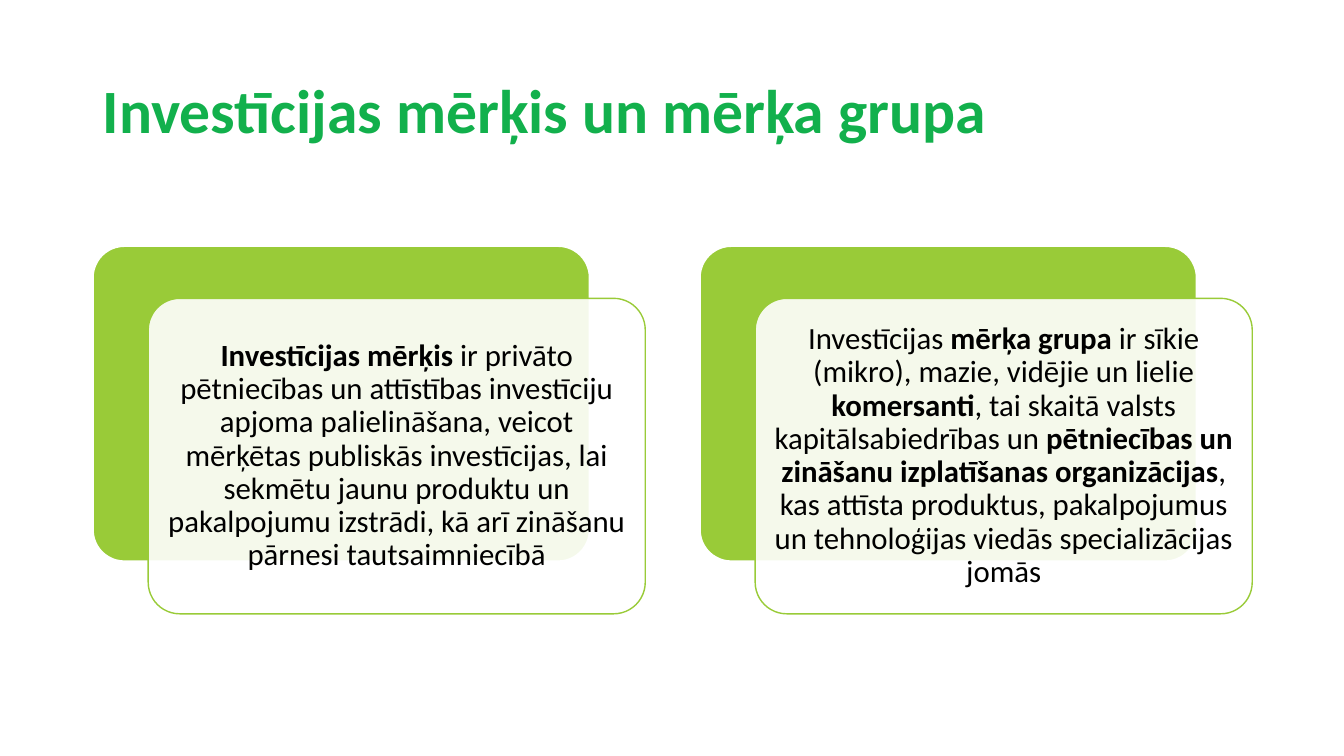
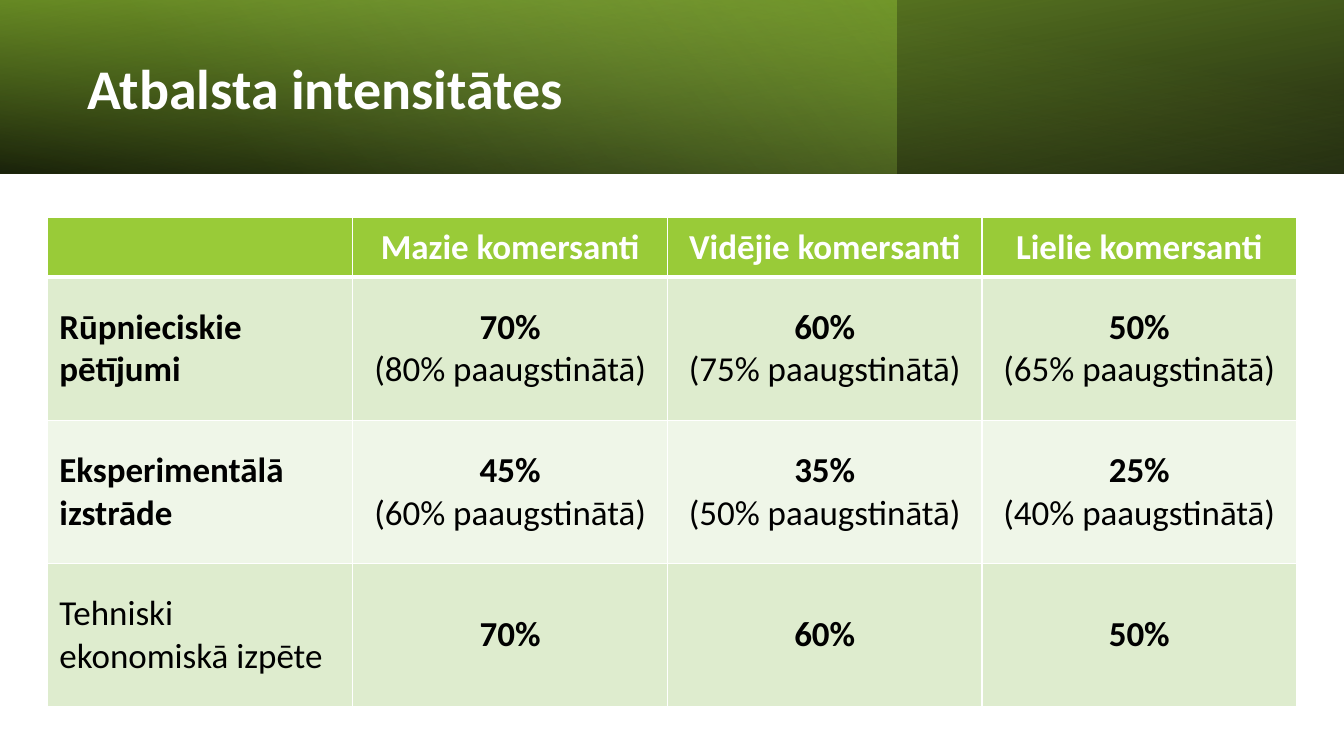
from lxml.etree import SubElement
from pptx import Presentation
from pptx.dml.color import RGBColor
from pptx.enum.shapes import MSO_SHAPE
from pptx.enum.text import MSO_ANCHOR, PP_ALIGN
from pptx.oxml.ns import qn
from pptx.util import Inches, Pt

FONT = "Calibri"
WHITE = RGBColor(0xFF, 0xFF, 0xFF)
BLACK = RGBColor(0x00, 0x00, 0x00)
TITLE_GREEN = RGBColor(0x12, 0xB0, 0x4C)
LIME = RGBColor(0x99, 0xCB, 0x38)
PALE_LIME = RGBColor(0xC2, 0xE0, 0x88)
DARK_LIME = RGBColor(0x73, 0x9A, 0x28)
ROW_FILLS = [RGBColor(0xDE, 0xEC, 0xCE), RGBColor(0xEF, 0xF6, 0xE8)]

# Content: runs are (text, bold)
GOAL_TITLE = "Investīcijas mērķis un mērķa grupa"
CARDS = [
    [("Investīcijas mērķis ", True),
     ("ir privāto pētniecības un attīstības investīciju apjoma palielināšana, "
      "veicot mērķētas publiskās investīcijas, lai sekmētu jaunu produktu un "
      "pakalpojumu izstrādi, kā arī zināšanu pārnesi tautsaimniecībā", False)],
    [("Investīcijas ", False), ("mērķa grupa", True),
     (" ir sīkie (mikro), mazie, vidējie un lielie ", False),
     ("komersanti", True),
     (", tai skaitā valsts kapitālsabiedrības un ", False),
     ("pētniecības un zināšanu izplatīšanas organizācijas", True),
     (", kas attīsta produktus, pakalpojumus un tehnoloģijas viedās "
      "specializācijas jomās", False)],
]

RATES_TITLE = "Atbalsta intensitātes"
HEADERS = ["", "Mazie komersanti", "Vidējie komersanti", "Lielie komersanti"]
# Label, label is bold, (rate, raised rate) per column
RATES = [
    ("Rūpnieciskie pētījumi", True,
     [("70%", "80%"), ("60%", "75%"), ("50%", "65%")]),
    ("Eksperimentālā izstrāde", True,
     [("45%", "60%"), ("35%", "50%"), ("25%", "40%")]),
    ("Tehniski ekonomiskā izpēte", False,
     [("70%", None), ("60%", None), ("50%", None)]),
]

# Band layers: width, rotation, flipped, angle, stops of (position, colour, opacity)
BAND_HEIGHT = 1.72
BAND_LAYERS = [
    (13.33, 180, True, 100, [(0, BLACK, 96), (100, DARK_LIME, 100)]),
    (8.89, 0, False, 140, [(0, LIME, 41), (74, PALE_LIME, 0)]),
    (13.33, 0, True, 260, [(0, BLACK, 63), (78, LIME, 15)]),
]


def add_text(tf, paragraphs, size, color, align=PP_ALIGN.LEFT, spacing=1.0):
    tf.word_wrap = True
    for i, runs in enumerate(paragraphs):
        p = tf.paragraphs[0] if i == 0 else tf.add_paragraph()
        p.alignment = align
        p.line_spacing = spacing
        for text, bold in runs:
            r = p.add_run()
            r.text = text
            r.font.name = FONT
            r.font.size = Pt(size)
            r.font.bold = bold
            r.font.color.rgb = color


def add_title(s, text, box, size, color):
    tf = s.shapes.add_textbox(*map(Inches, box)).text_frame
    tf.vertical_anchor = MSO_ANCHOR.MIDDLE
    add_text(tf, [[(text, True)]], size, color, spacing=0.9)


def add_alpha(color_el, percent):
    SubElement(color_el, qn("a:alpha"), val=str(percent * 1000))


def add_card(s, left, top, fill, line, line_width):
    sp = s.shapes.add_shape(MSO_SHAPE.ROUNDED_RECTANGLE, Inches(left),
                            Inches(top), Inches(4.93), Inches(3.13))
    sp.adjustments[0] = 0.1
    sp.shadow.inherit = False
    sp.fill.solid()
    sp.fill.fore_color.rgb = fill
    sp.line.color.rgb = line
    sp.line.width = Pt(line_width)
    return sp


def add_band_layer(s, width, rotation, flipped, angle, stops):
    sp = s.shapes.add_shape(MSO_SHAPE.RECTANGLE, 0, 0,
                            Inches(width), Inches(BAND_HEIGHT))
    sp.shadow.inherit = False
    sp.line.fill.background()
    sp.rotation = rotation
    spPr = sp._element.spPr
    if flipped:
        spPr.find(qn("a:xfrm")).set("flipH", "1")
    grad = SubElement(spPr, qn("a:gradFill"), rotWithShape="1")
    stop_list = SubElement(grad, qn("a:gsLst"))
    for position, color, opacity in stops:
        gs = SubElement(stop_list, qn("a:gs"), pos=str(position * 1000))
        add_alpha(SubElement(gs, qn("a:srgbClr"), val=str(color)), opacity)
    SubElement(grad, qn("a:lin"), ang=str(angle * 60000), scaled="0")
    spPr.find(qn("a:prstGeom")).addnext(grad)


def style_cell(cell, fill, bottom_width=1):
    cell.vertical_anchor = MSO_ANCHOR.MIDDLE
    cell.margin_left = cell.margin_right = Inches(0.12)
    cell.margin_top = cell.margin_bottom = Inches(0.06)
    tcPr = cell._tc.get_or_add_tcPr()
    for side in "LRTB":
        width = Pt(bottom_width if side == "B" else 1)
        ln = SubElement(tcPr, qn(f"a:ln{side}"), w=str(width))
        line_fill = SubElement(ln, qn("a:solidFill"))
        SubElement(line_fill, qn("a:srgbClr"), val=str(WHITE))
    cell.fill.solid()
    cell.fill.fore_color.rgb = fill


def build_goal_slide(s):
    add_title(s, GOAL_TITLE, (0.92, 0.4, 10.28, 1.45), 44, TITLE_GREEN)
    for i, runs in enumerate(CARDS):
        left, top = 0.92 + i * 6.02, 2.44
        add_card(s, left, top, LIME, WHITE, 1.5)
        front = add_card(s, left + 0.55, top + 0.52, WHITE, LIME, 1)
        add_alpha(front._element.spPr.find(
            f"{qn('a:solidFill')}/{qn('a:srgbClr')}"), 90)
        tf = front.text_frame
        tf.margin_left = tf.margin_right = Inches(0.09)
        tf.margin_top = tf.margin_bottom = Inches(0.09)
        tf.vertical_anchor = MSO_ANCHOR.MIDDLE
        add_text(tf, [runs], 22, BLACK, PP_ALIGN.CENTER, 0.9)


def build_rates_slide(s):
    for layer in BAND_LAYERS:
        add_band_layer(s, *layer)
    add_title(s, RATES_TITLE, (0.77, 0.27, 7.72, 1.27), 40, WHITE)

    # Table grid
    table = s.shapes.add_table(len(RATES) + 1, len(HEADERS), Inches(0.47),
                               Inches(2.16), Inches(12.39), Inches(4.85)).table
    for i, column in enumerate(table.columns):
        column.width = Inches(3.12 if i else 3.03)
    for i, row in enumerate(table.rows):
        row.height = Inches(1.42 if i else 0.59)

    # Header row
    for i, header in enumerate(HEADERS):
        cell = table.cell(0, i)
        style_cell(cell, LIME, bottom_width=3)
        if header:
            add_text(cell.text_frame, [[(header, True)]], 25, WHITE,
                     PP_ALIGN.CENTER)

    # Rate rows
    for i, (label, bold, rates) in enumerate(RATES):
        cells = table.rows[i + 1].cells
        for cell in cells:
            style_cell(cell, ROW_FILLS[i % 2])
        add_text(cells[0].text_frame, [[(label, bold)]], 25, BLACK)
        for j, (rate, raised) in enumerate(rates, 1):
            paragraphs = [[(rate, True)]]
            if raised:
                paragraphs.append([(f"({raised} paaugstinātā)", False)])
            add_text(cells[j].text_frame, paragraphs, 25, BLACK,
                     PP_ALIGN.CENTER)


def main():
    prs = Presentation()
    prs.slide_width, prs.slide_height = Inches(13.33), Inches(7.5)
    for build in (build_goal_slide, build_rates_slide):
        build(prs.slides.add_slide(prs.slide_layouts[6]))
    prs.save("out.pptx")


if __name__ == "__main__":
    main()
